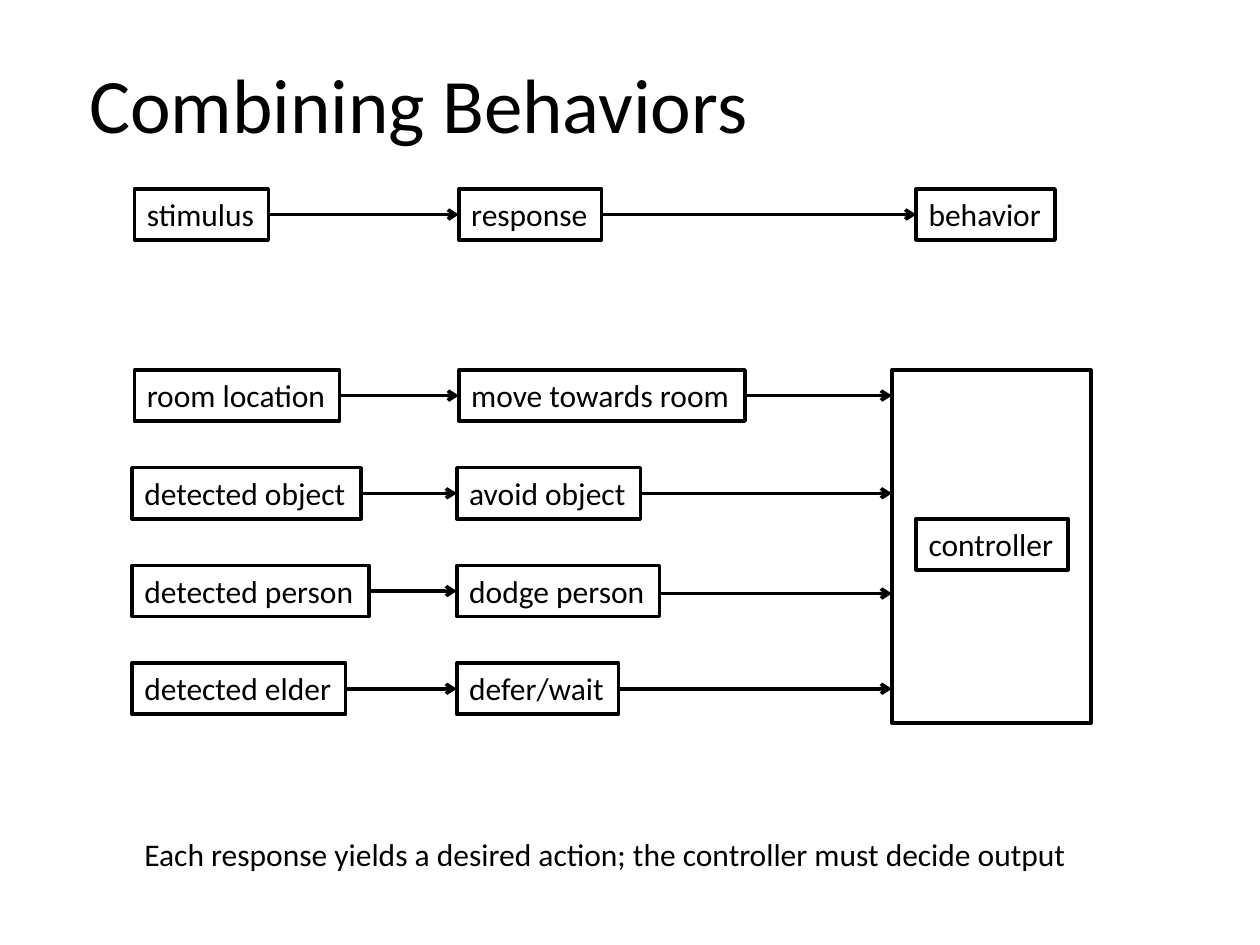
from typing import Any, NamedTuple, Optional

from lxml.etree import SubElement
from pptx import Presentation
from pptx.dml.color import RGBColor
from pptx.enum.shapes import MSO_CONNECTOR, MSO_SHAPE
from pptx.enum.text import MSO_ANCHOR, MSO_AUTO_SIZE, PP_ALIGN
from pptx.oxml.ns import qn
from pptx.util import Cm, Pt

BLACK = RGBColor(0x00, 0x00, 0x00)
LINE_WIDTH = Pt(2)
BOX_H = 1.03
TOP_ROW = 3.81
FIRST_ROW, ROW_STEP = 7.46, 1.97
STIMULUS_X, RESPONSE_X, BEHAVIOR_X = 2.71, 9.25, 18.47
DETECTED_X, REACTION_X = 2.66, 9.21
FRAME_X, FRAME_W, FRAME_H = 17.98, 4.01, 7.12
LEFT, RIGHT = 1, 3


class Box(NamedTuple):
    text: str
    x: float
    w: float


class Rule(NamedTuple):
    stimulus: Box
    response: Box
    drop: float = 0


CHAIN = [
    Box("stimulus", STIMULUS_X, 2.7),
    Box("response", RESPONSE_X, 2.88),
    Box("behavior", BEHAVIOR_X, 2.8),
]
RULES = [
    Rule(Box("room location", STIMULUS_X, 4.14), Box("move towards room", RESPONSE_X, 5.77)),
    Rule(Box("detected object", DETECTED_X, 4.62), Box("avoid object", REACTION_X, 3.7)),
    Rule(Box("detected person", DETECTED_X, 4.78), Box("dodge person", REACTION_X, 4.09), 0.05),
    Rule(Box("detected elder", DETECTED_X, 4.31), Box("defer/wait", REACTION_X, 3.26)),
]


def apply_format(target: Any, values: dict[str, Any]) -> None:
    for name, value in values.items():
        setattr(target, name, value)


def write(sp: Any, text: str, size: int = 18, wrap: bool = False) -> None:
    tf = sp.text_frame
    apply_format(tf, {
        "word_wrap": wrap,
        "auto_size": MSO_AUTO_SIZE.SHAPE_TO_FIT_TEXT,
        "vertical_anchor": MSO_ANCHOR.TOP,
    })
    p = tf.paragraphs[0]
    p.alignment = PP_ALIGN.LEFT
    r = p.add_run()
    r.text = text
    apply_format(r.font, {"name": "Calibri", "size": Pt(size)})
    r.font.color.rgb = BLACK


def draw_line_format(sp: Any) -> None:
    sp.line.color.rgb = BLACK
    sp.line.width = LINE_WIDTH


def add_rect(s: Any, x: float, y: float, w: float, h: float) -> Any:
    sp = s.shapes.add_shape(MSO_SHAPE.RECTANGLE, Cm(x), Cm(y), Cm(w), Cm(h))
    sp.shadow.inherit = False
    sp.fill.background()
    draw_line_format(sp)
    return sp


def add_box(s: Any, box: Box, y: float) -> Any:
    sp = add_rect(s, box.x, y, box.w, BOX_H)
    write(sp, box.text)
    return sp


def add_arrow(s: Any, x1: float, x2: float, y: float,
              start: Optional[Any] = None, end: Optional[Any] = None) -> None:
    c = s.shapes.add_connector(MSO_CONNECTOR.STRAIGHT, Cm(x1), Cm(y), Cm(x2), Cm(y))
    draw_line_format(c)
    SubElement(c.line._get_or_add_ln(), qn("a:tailEnd"), type="arrow")
    SubElement(c._element.spPr, qn("a:effectLst"))
    if start is not None:
        c.begin_connect(start, RIGHT)
    if end is not None:
        c.end_connect(end, LEFT)


def add_chain(s: Any, boxes: list[Box], y: float) -> list[Any]:
    shapes = [add_box(s, box, y) for box in boxes]
    for i in range(len(boxes) - 1):
        add_arrow(s, boxes[i].x + boxes[i].w, boxes[i + 1].x, y + BOX_H / 2,
                  shapes[i], shapes[i + 1])
    return shapes


def add_rule(s: Any, rule: Rule, y: float) -> None:
    response = rule.response
    shapes = add_chain(s, [rule.stimulus, response], y)
    add_arrow(s, response.x + response.w, FRAME_X, y + BOX_H / 2 + rule.drop,
              None if rule.drop else shapes[-1])


def add_text(s: Any, text: str, x: float, y: float, w: float, h: float,
             size: int, wrap: bool) -> None:
    write(s.shapes.add_textbox(Cm(x), Cm(y), Cm(w), Cm(h)), text, size, wrap)


def main() -> None:
    prs = Presentation()
    apply_format(prs, {"slide_width": Cm(25.4), "slide_height": Cm(19.05)})
    s = prs.slides.add_slide(prs.slide_layouts[6])

    add_text(s, "Combining Behaviors", 1.55, 1.02, 13.92, 2.13, 44, False)
    add_chain(s, CHAIN, TOP_ROW)
    add_rect(s, FRAME_X, FIRST_ROW, FRAME_W, FRAME_H)
    add_box(s, Box("controller", BEHAVIOR_X, 3.06), 10.46)
    for i, rule in enumerate(RULES):
        add_rule(s, rule, FIRST_ROW + i * ROW_STEP)
    add_text(s, "Each response yields a desired action; the controller must decide output",
             DETECTED_X, 16.71, 19.38, BOX_H, 18, True)

    prs.save("out.pptx")


if __name__ == "__main__":
    main()
